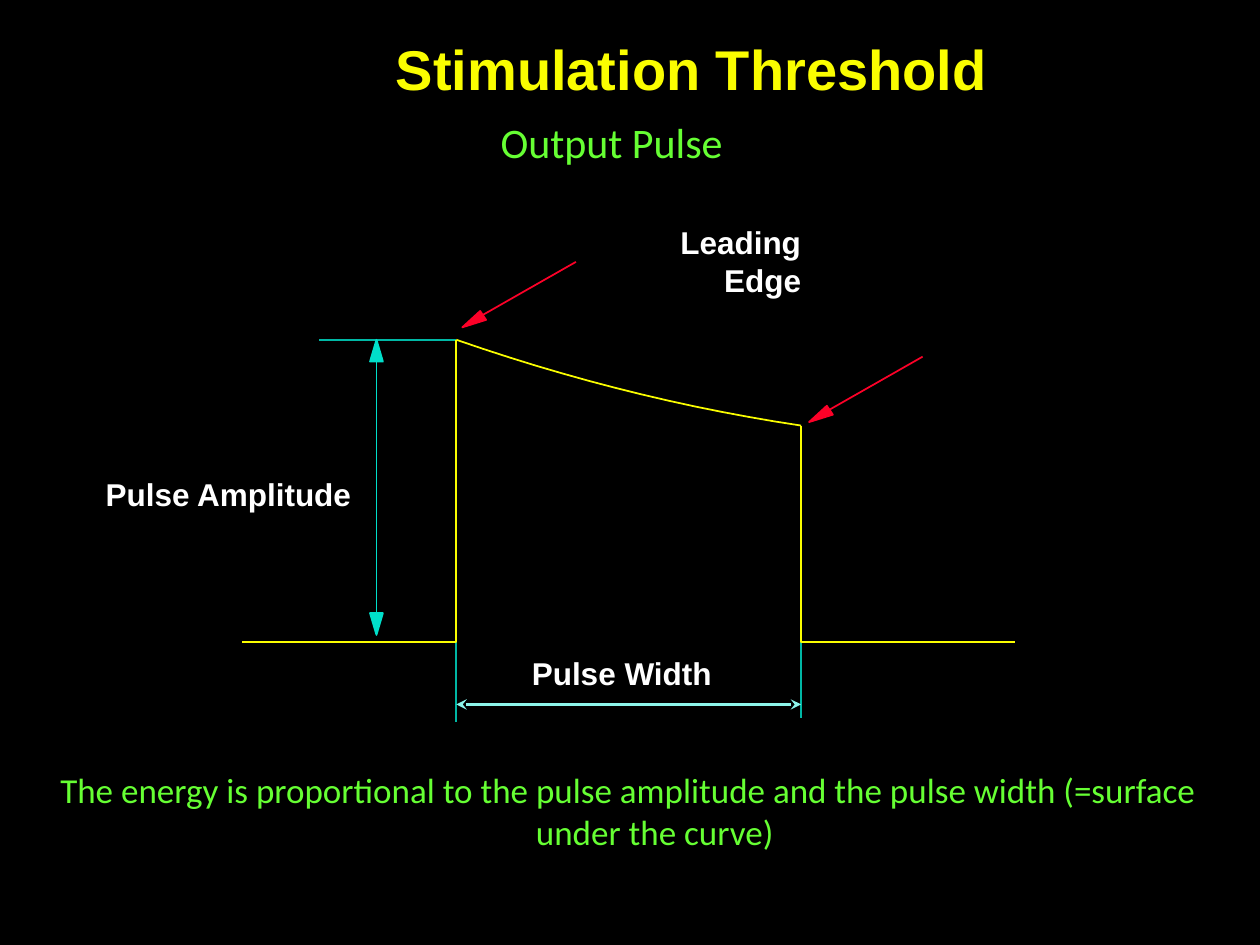
from lxml import etree
from pptx import Presentation
from pptx.dml.color import RGBColor
from pptx.enum.shapes import MSO_CONNECTOR
from pptx.enum.text import MSO_ANCHOR, MSO_AUTO_SIZE, PP_ALIGN
from pptx.oxml.ns import qn
from pptx.util import Cm, Pt

STRAIGHT = MSO_CONNECTOR.STRAIGHT
LEFT, CENTER, RIGHT = PP_ALIGN.LEFT, PP_ALIGN.CENTER, PP_ALIGN.RIGHT
TOP, MIDDLE = MSO_ANCHOR.TOP, MSO_ANCHOR.MIDDLE
GROW = MSO_AUTO_SIZE.SHAPE_TO_FIT_TEXT

BLACK, WHITE = "000000", "FFFFFF"
YELLOW, GREEN, RED = "FAFD00", "66FF33", "FC0128"
TEAL, TURQUOISE, AQUA = "00B7A5", "00DFCA", "8CF4EA"


def rgb(value):
    return RGBColor.from_string(value)


def write(frame, text, size=18, font="Arial", color=WHITE, bold=True,
          align=RIGHT, anchor=TOP, wrap=True):
    frame.margin_left = frame.margin_right = Cm(0.13)
    frame.margin_top = frame.margin_bottom = Cm(0.05)
    frame.word_wrap = wrap
    frame.auto_size = GROW
    frame.vertical_anchor = anchor
    paragraph = frame.paragraphs[0]
    paragraph.alignment = align
    paragraph.space_before = Pt(0)
    run = paragraph.add_run()
    run.text = text
    run.font.size = Pt(size)
    run.font.name = font
    run.font.bold = bold
    run.font.color.rgb = rgb(color)
    return paragraph


class PulseSlide:
    def __init__(self, slide):
        self.slide = slide
        self.shapes = slide.shapes
        background = slide.background.fill
        background.solid()
        background.fore_color.rgb = rgb(BLACK)

    def label(self, text, box, **style):
        textbox = self.shapes.add_textbox(*map(Cm, box))
        write(textbox.text_frame, text, **style)

    def placeholder(self, index, text, box, **style):
        holder = self.slide.placeholders[index]
        holder.left, holder.top, holder.width, holder.height = map(Cm, box)
        return write(holder.text_frame, text, font="Calibri", color=GREEN,
                     bold=False, **style)

    def line(self, start, end, color, width=1, ends=None):
        connector = self.shapes.add_connector(STRAIGHT, *map(Cm, start + end))
        connector.line.color.rgb = rgb(color)
        connector.line.width = Pt(width)
        if ends:
            outline = connector.line._get_or_add_ln()
            for tag in ("a:headEnd", "a:tailEnd"):
                etree.SubElement(outline, qn(tag), type=ends)
        etree.SubElement(connector._element.spPr, qn("a:effectLst"))
        return connector

    def path_line(self, points, color, filled=False):
        corners = [(Cm(x), Cm(y)) for x, y in points]
        builder = self.shapes.build_freeform(*corners[0])
        builder.add_line_segments(corners[1:], close=filled)
        outline = builder.convert_to_shape()
        outline.shadow.inherit = False
        outline.line.color.rgb = rgb(color)
        outline.line.width = Pt(1)
        if filled:
            outline.fill.solid()
            outline.fill.fore_color.rgb = rgb(color)
        else:
            outline.fill.background()
        return outline

    def edge_pointer(self, x, y):
        shaft = self.line((x + 2.29, y - 1.32), (x + 0.41, y - 0.25), RED)
        head = self.path_line(
            [(x, y), (x + 0.48, y - 0.15), (x + 0.36, y - 0.33)], RED, True)
        self.shapes.add_group_shape([shaft, head])

    def height_arrow(self, x, top, bottom):
        head = 0.44
        self.line((x, top + head), (x, bottom - head), TURQUOISE)
        for tip, base in ((top, top + head), (bottom, bottom - head)):
            self.path_line([(x, tip), (x - 0.13, base), (x + 0.13, base)],
                           TURQUOISE, True)


def main():
    deck = Presentation()
    deck.slide_width, deck.slide_height = Cm(25.4), Cm(19.05)
    pulse = PulseSlide(deck.slides.add_slide(deck.slide_layouts[1]))

    pulse.placeholder(0, "Output Pulse", (9.96, 2.34, 5.54, 1.02), size=24,
                      align=LEFT, anchor=MIDDLE, wrap=False)
    energy = pulse.placeholder(
        1, "The energy is proportional to the pulse amplitude and the pulse "
        "width (=surface under the curve)", (1.02, 15.44, 23.29, 1.63),
        size=20, align=CENTER)
    indents = energy._p.get_or_add_pPr()
    indents.set("marL", str(Cm(1.07)))
    indents.set("indent", str(-Cm(1.07)))
    etree.SubElement(indents, qn("a:buNone"))

    pulse.label("Stimulation Threshold", (6.55, 0.64, 13.49, 1.45),
                size=32, color=YELLOW)
    pulse.label("Pulse Amplitude", (1.7, 9.53, 5.51, 0.86))
    pulse.label("Pulse Width", (10.59, 13.13, 3.89, 0.86), wrap=False)
    pulse.label("Leading Edge", (11.86, 4.45, 4.42, 0.86), wrap=False)

    leading, trailing = 9.2, 16.15
    peak, droop, baseline = 6.85, 8.58, 12.95

    pulse.line((leading, baseline), (leading, 14.55), TEAL)
    pulse.line((trailing, baseline), (trailing, 14.48), TEAL)
    pulse.line((leading, peak), (6.43, peak), TEAL)
    pulse.height_arrow(7.59, peak, 12.8)

    pulse.path_line([(4.88, baseline), (leading, baseline), (leading, peak)],
                    YELLOW)
    pulse.path_line([(trailing, droop), (trailing, baseline),
                     (20.47, baseline)], YELLOW)
    steps = [step / 13 for step in range(14)]
    pulse.path_line([(leading + (trailing - leading) * t,
                      peak + (droop - peak) * t * (1.4 - 0.4 * t))
                     for t in steps], YELLOW)

    pulse.line((leading, 14.2), (trailing, 14.2), AQUA, 2, "stealth")
    pulse.edge_pointer(9.32, 6.6)
    pulse.edge_pointer(16.31, 8.51)

    deck.save("out.pptx")


if __name__ == "__main__":
    main()
